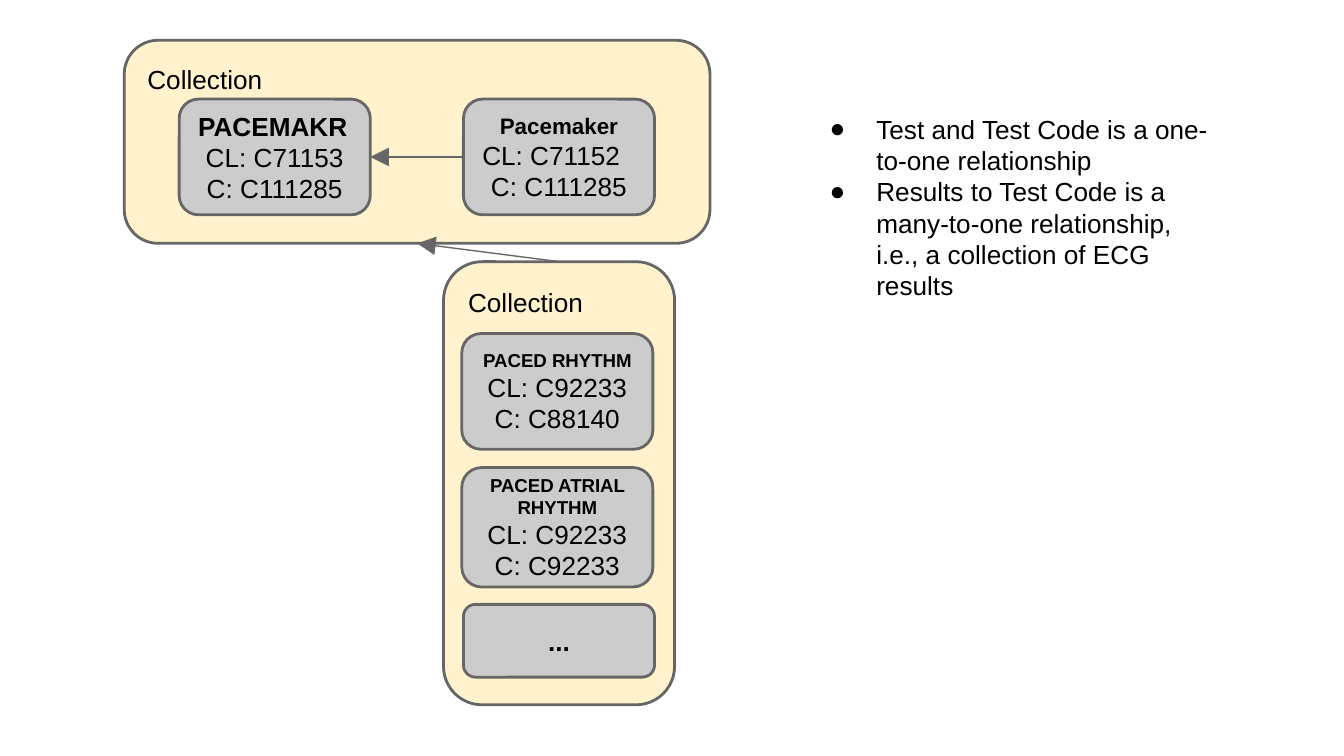
from dataclasses import dataclass

from lxml import etree
from pptx import Presentation
from pptx.dml.color import RGBColor
from pptx.enum.shapes import MSO_CONNECTOR, MSO_SHAPE
from pptx.enum.text import MSO_ANCHOR, PP_ALIGN
from pptx.oxml.ns import qn
from pptx.util import Pt

ROUNDED = MSO_SHAPE.ROUNDED_RECTANGLE
STRAIGHT = MSO_CONNECTOR.STRAIGHT
TOP, MIDDLE = MSO_ANCHOR.TOP, MSO_ANCHOR.MIDDLE
LEFT, CENTER = PP_ALIGN.LEFT, PP_ALIGN.CENTER
TOP_SITE, LEFT_SITE, BOTTOM_SITE, RIGHT_SITE = range(4)


@dataclass(frozen=True)
class Theme:
    font: str = "Arial"
    text: RGBColor = RGBColor(0, 0, 0)
    line: RGBColor = RGBColor(0x66, 0x66, 0x66)
    collection: RGBColor = RGBColor(0xFF, 0xF2, 0xCC)
    term: RGBColor = RGBColor(0xCC, 0xCC, 0xCC)
    body: int = 14
    medium: int = 12
    small: int = 10
    outline: float = 1.5
    arrow: float = 0.75
    inset: float = 7.2


THEME = Theme()
TERM_WIDTH = 102.4
TERM_HEIGHT = 62


def set_frame(frame, anchor):
    inset = Pt(THEME.inset)
    settings = {
        "word_wrap": True,
        "vertical_anchor": anchor,
        "margin_left": inset,
        "margin_right": inset,
        "margin_top": inset,
        "margin_bottom": inset,
    }
    for name, value in settings.items():
        setattr(frame, name, value)


def write_lines(frame, lines):
    for index, (text, size, bold, alignment) in enumerate(lines):
        paragraph = frame.add_paragraph() if index else frame.paragraphs[0]
        paragraph.alignment = alignment
        run = paragraph.add_run()
        run.text = text
        settings = {"name": THEME.font, "size": Pt(size), "bold": bold}
        for name, value in settings.items():
            setattr(run.font, name, value)
        run.font.color.rgb = THEME.text


def add_box(shapes, bounds, fill, anchor, lines):
    shape = shapes.add_shape(ROUNDED, *map(Pt, bounds))
    shape.shadow.inherit = False
    shape.fill.solid()
    shape.fill.fore_color.rgb = fill
    shape.line.color.rgb = THEME.line
    shape.line.width = Pt(THEME.outline)
    set_frame(shape.text_frame, anchor)
    write_lines(shape.text_frame, lines)
    return shape


def add_collection(shapes, bounds):
    lines = [("Collection", THEME.body, False, LEFT)]
    return add_box(shapes, bounds, THEME.collection, TOP, lines)


def add_term(shapes, left, top, title, codes, size=THEME.body,
             height=TERM_HEIGHT, alignments=(CENTER, CENTER, CENTER)):
    lines = [(title, size, True, alignments[0])]
    for code, alignment in zip(codes, alignments[1:]):
        lines.append((code, THEME.body, False, alignment))
    bounds = (left, top, TERM_WIDTH, height)
    return add_box(shapes, bounds, THEME.term, MIDDLE, lines)


def add_arrow(shapes, target, target_site, source, source_site):
    connector = shapes.add_connector(STRAIGHT, 0, 0, 0, 0)
    connector.begin_connect(target, target_site)
    connector.end_connect(source, source_site)
    connector.line.color.rgb = THEME.line
    connector.line.width = Pt(THEME.arrow)
    etree.SubElement(connector.line._get_or_add_ln(), qn("a:headEnd"),
                     type="triangle", w="lg", len="lg")
    etree.SubElement(connector._element.spPr, qn("a:effectLst"))


def add_bullets(shapes, bounds, texts):
    frame = shapes.add_textbox(*map(Pt, bounds)).text_frame
    set_frame(frame, TOP)
    write_lines(frame, [(text, THEME.body, False, LEFT) for text in texts])
    for paragraph in frame.paragraphs:
        properties = paragraph._p.get_or_add_pPr()
        properties.set("marL", str(Pt(36)))
        properties.set("indent", str(-Pt(25)))
        color = etree.SubElement(properties, qn("a:buClr"))
        etree.SubElement(color, qn("a:srgbClr"), val=str(THEME.text))
        etree.SubElement(properties, qn("a:buFont"), typeface=THEME.font)
        etree.SubElement(properties, qn("a:buChar"), char="●")


def add_test_collection(shapes):
    collection = add_collection(shapes, (66.6, 21.6, 313.8, 108.8))
    code = add_term(shapes, 96, 53.1, "PACEMAKR",
                    ["CL: C71153", "C: C111285"],
                    alignments=(LEFT, CENTER, CENTER))
    test = add_term(shapes, 248.3, 53.1, "Pacemaker",
                    ["CL: C71152", "C: C111285"], size=THEME.medium,
                    alignments=(CENTER, LEFT, CENTER))
    return collection, code, test


def add_result_collection(shapes):
    group = shapes.add_group_shape()
    collection = add_collection(group.shapes, (237.6, 140.2, 123.8, 237.4))
    add_term(group.shapes, 247.4, 178.7, "PACED RHYTHM",
             ["CL: C92233", "C: C88140"], size=THEME.small)
    add_term(group.shapes, 247.4, 250.5, "PACED ATRIAL RHYTHM",
             ["CL: C92233", "C: C92233"], size=THEME.small, height=64)
    return collection


def main():
    presentation = Presentation()
    presentation.slide_width = Pt(720)
    presentation.slide_height = Pt(405)
    slide = presentation.slides.add_slide(presentation.slide_layouts[6])
    shapes = slide.shapes

    tests, code, test = add_test_collection(shapes)
    results = add_result_collection(shapes)
    add_arrow(shapes, code, RIGHT_SITE, test, LEFT_SITE)
    add_arrow(shapes, tests, BOTTOM_SITE, results, TOP_SITE)
    add_bullets(shapes, (426.4, 53.3, 228.2, 294.5), [
        "Test and Test Code is a one-to-one relationship",
        "Results to Test Code is a many-to-one relationship, "
        "i.e., a collection of ECG results",
    ])
    add_term(shapes, 248.3, 323.8, "...", [], height=39)
    presentation.save("out.pptx")


if __name__ == "__main__":
    main()
